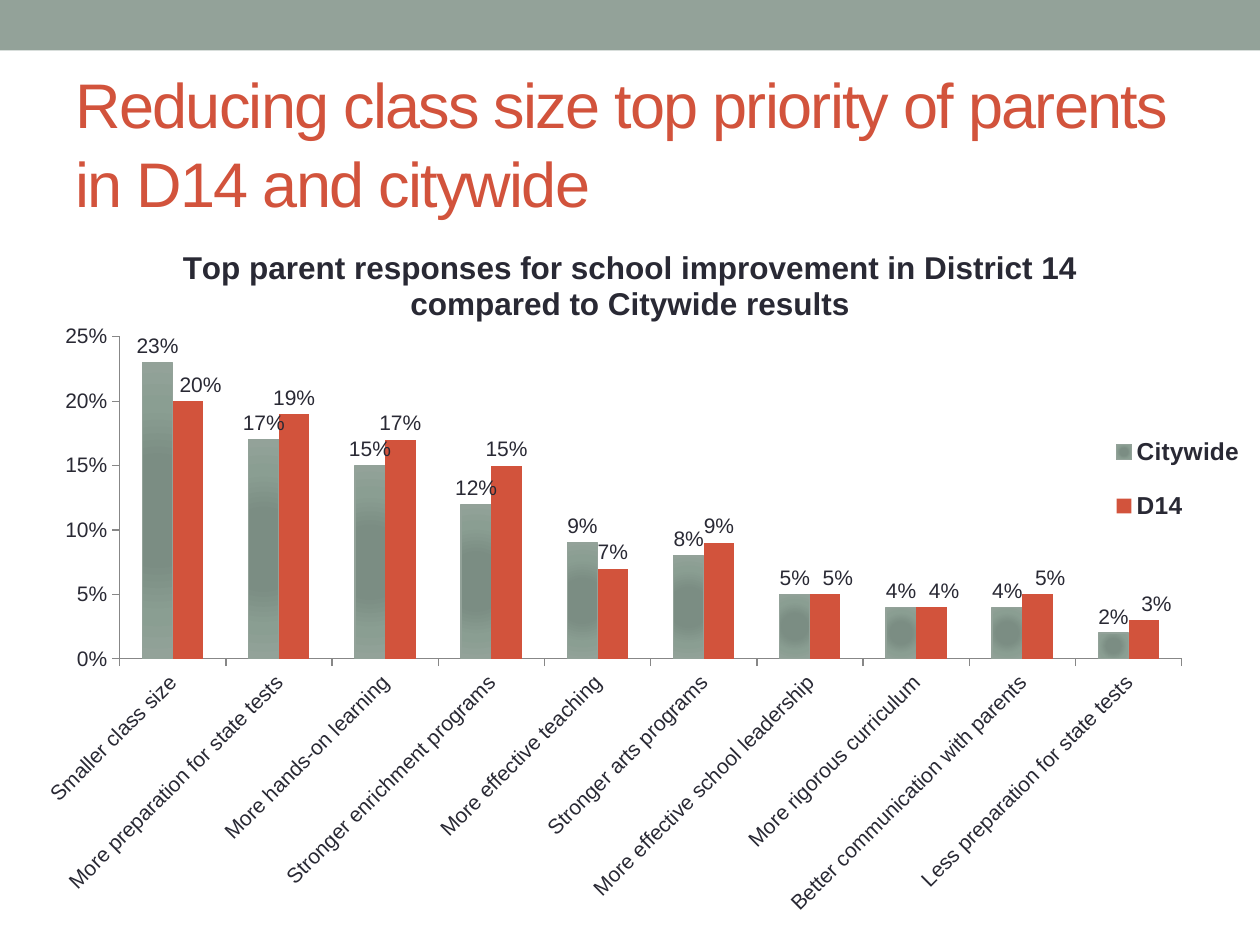
from lxml import etree
from pptx import Presentation
from pptx.chart.data import CategoryChartData
from pptx.dml.color import RGBColor
from pptx.enum.chart import (XL_CHART_TYPE as CHART, XL_LABEL_POSITION as LABEL,
                             XL_LEGEND_POSITION as LEGEND, XL_TICK_MARK as TICK)
from pptx.enum.shapes import MSO_SHAPE as SHAPE
from pptx.enum.text import MSO_ANCHOR as ANCHOR, MSO_AUTO_SIZE as FIT, PP_ALIGN as ALIGN
from pptx.oxml import parse_xml
from pptx.oxml.ns import nsdecls, qn
from pptx.util import Cm, Pt

SAGE = RGBColor(0x93, 0xA2, 0x99)
RED = RGBColor(0xD2, 0x53, 0x3C)
INK = RGBColor(0x29, 0x29, 0x34)
GRAY = RGBColor(0x87, 0x87, 0x87)

PERCENT = '0"%"'
SAGE_STOPS = [(0, "7B8E82"), (34, "7B8D83"), (70, "8A9E92"), (100, "93A299")]
RESPONSES = [
    ("Smaller class size", 23, 20),
    ("More preparation for state tests", 17, 19),
    ("More hands-on learning", 15, 17),
    ("Stronger enrichment programs", 12, 15),
    ("More effective teaching", 9, 7),
    ("Stronger arts programs", 8, 9),
    ("More effective school leadership", 5, 5),
    ("More rigorous curriculum", 4, 4),
    ("Better communication with parents", 4, 5),
    ("Less preparation for state tests", 2, 3),
]
# D14 labels moved to the right, as a share of the chart width
LABEL_SHIFTS = {0: 0.01, 6: 0.01, 7: 0.01, 8: 0.01, 9: 0.01}


def set_format(target, values):
    for name, value in values.items():
        setattr(target, name, value)


def layout_xml(inner=False, **places):
    """Manual chart layout; x and y are edges unless only x is given."""
    edges = [k + "Mode" for k in ("x", "y") if k in places and "w" in places]
    target = '<c:layoutTarget val="inner"/>' if inner else ""
    modes = "".join(f'<c:{m} val="edge"/>' for m in edges)
    sizes = "".join(f'<c:{k} val="{v}"/>' for k, v in places.items())
    return parse_xml(f'<c:layout {nsdecls("c")}><c:manualLayout>{target}{modes}{sizes}'
                     '</c:manualLayout></c:layout>')


def place(element, layout, after=None):
    for old in element.findall(qn("c:layout")):
        element.remove(old)
    if after is None:
        element.insert(0, layout)
    else:
        element.find(qn(after)).addnext(layout)


class SlideBuilder:
    font_name = "Arial"

    def __init__(self, prs):
        self.s = prs.slides.add_slide(prs.slide_layouts[5])

    def style(self, font, size, color=INK, bold=False):
        set_format(font, {"name": self.font_name, "size": Pt(size), "bold": bold})
        font.color.rgb = color

    def band(self, x, y, w, h, color):
        sp = self.s.shapes.add_shape(SHAPE.RECTANGLE, Cm(x), Cm(y), Cm(w), Cm(h))
        sp.shadow.inherit = False
        sp.fill.solid()
        sp.fill.fore_color.rgb = color
        sp.line.fill.background()

    def title(self, text, x, y, w, h):
        sp = self.s.shapes.title
        set_format(sp, {"left": Cm(x), "top": Cm(y), "width": Cm(w), "height": Cm(h)})
        tf = sp.text_frame
        set_format(tf, {"word_wrap": True, "auto_size": FIT.NONE,
                        "vertical_anchor": ANCHOR.MIDDLE})
        p = tf.paragraphs[0]
        set_format(p, {"alignment": ALIGN.LEFT, "line_spacing": 1.05})
        r = p.add_run()
        r.text = text
        self.style(r.font, 36, RED)
        r.font._element.set("spc", "-100")

    def column_chart(self, title, names, rows, x, y, w, h):
        data = CategoryChartData(number_format=PERCENT)
        cats, *columns = zip(*rows)
        data.categories = cats
        for name, values in zip(names, columns):
            data.add_series(name, values)
        chart = self.s.shapes.add_chart(CHART.COLUMN_CLUSTERED, Cm(x), Cm(y),
                                        Cm(w), Cm(h), data).chart
        self.style(chart.font, 10)
        chart.has_title = True
        p = chart.chart_title.text_frame.paragraphs[0]
        r = p.add_run()
        r.text = title
        self.style(r.font, 18, bold=True)
        set_format(chart.plots[0], {"gap_width": 150, "overlap": 0,
                                    "vary_by_categories": False})
        return chart

    def axis(self, axis):
        set_format(axis, {"has_major_gridlines": False, "major_tick_mark": TICK.OUTSIDE,
                          "minor_tick_mark": TICK.NONE})
        self.style(axis.tick_labels.font, 12)
        axis.format.line.color.rgb = GRAY
        axis.format.line.width = Pt(0.75)

    def legend(self, chart, **places):
        chart.has_legend = True
        set_format(chart.legend, {"position": LEGEND.RIGHT, "include_in_layout": False})
        self.style(chart.legend.font, 14, bold=True)
        place(chart.legend._element, layout_xml(**places), "c:legendPos")

    def labels(self, series):
        labels = series.data_labels
        set_format(labels, {"show_value": True, "position": LABEL.OUTSIDE_END,
                            "number_format": PERCENT, "number_format_is_linked": False})
        self.style(labels.font, 12)

    def shift_label(self, series, index, shift):
        label = series.points[index].data_label
        label.position = LABEL.OUTSIDE_END
        self.style(label.font, 12)
        dLbl = next(d for d in series.data_labels._element.findall(qn("c:dLbl"))
                    if d.find(qn("c:idx")).get("val") == str(index))
        place(dLbl, layout_xml(x=shift, y=0), "c:idx")
        num_fmt = etree.Element(qn("c:numFmt"), formatCode=PERCENT, sourceLinked="0")
        dLbl.find(qn("c:layout")).addnext(num_fmt)

    def radial_fill(self, series, stops, line_color):
        series.format.line.color.rgb = line_color
        series.format.line.width = Pt(0.75)
        gs = "".join(f'<a:gs pos="{pos * 1000}"><a:srgbClr val="{color}"/></a:gs>'
                     for pos, color in stops)
        center = " ".join(f'{side}="50000"' for side in "ltrb")
        series._element.spPr.insert(0, parse_xml(
            f'<a:gradFill {nsdecls("a")} rotWithShape="1"><a:gsLst>{gs}</a:gsLst>'
            f'<a:path path="circle"><a:fillToRect {center}/></a:path></a:gradFill>'))


def main():
    prs = Presentation()
    prs.slide_width, prs.slide_height = Cm(25.4), Cm(19.05)
    b = SlideBuilder(prs)

    # Top band and title
    b.band(0, 0, 25.4, 1.02, SAGE)
    b.title("Reducing class size top priority of parents in D14 and citywide",
            1.27, 1.47, 22.86, 2.74)

    # Chart
    chart = b.column_chart("Top parent responses for school improvement in District 14 "
                           "compared to Citywide results", ("Citywide", "D14"),
                           RESPONSES, 0, 4.45, 25.4, 14.27)
    place(chart._chartSpace.chart.plotArea,
          layout_xml(inner=True, x=0.095, y=0.164, w=0.843, h=0.455))
    b.legend(chart, x=0.88, y=0.27, w=0.11, h=0.19)

    # Axes
    for axis in (chart.category_axis, chart.value_axis):
        b.axis(axis)
    chart.category_axis._element.txPr.bodyPr.set("rot", "-2700000")
    set_format(chart.value_axis, {"minimum_scale": 0, "maximum_scale": 25, "major_unit": 5})
    set_format(chart.value_axis.tick_labels, {"number_format": PERCENT,
                                              "number_format_is_linked": False})

    # Series colours and labels
    citywide, d14 = chart.plots[0].series
    b.radial_fill(citywide, SAGE_STOPS, SAGE)
    d14.format.fill.solid()
    d14.format.fill.fore_color.rgb = RED
    for series in (citywide, d14):
        b.labels(series)
    for index, shift in LABEL_SHIFTS.items():
        b.shift_label(d14, index, shift)

    prs.save("out.pptx")


if __name__ == "__main__":
    main()
